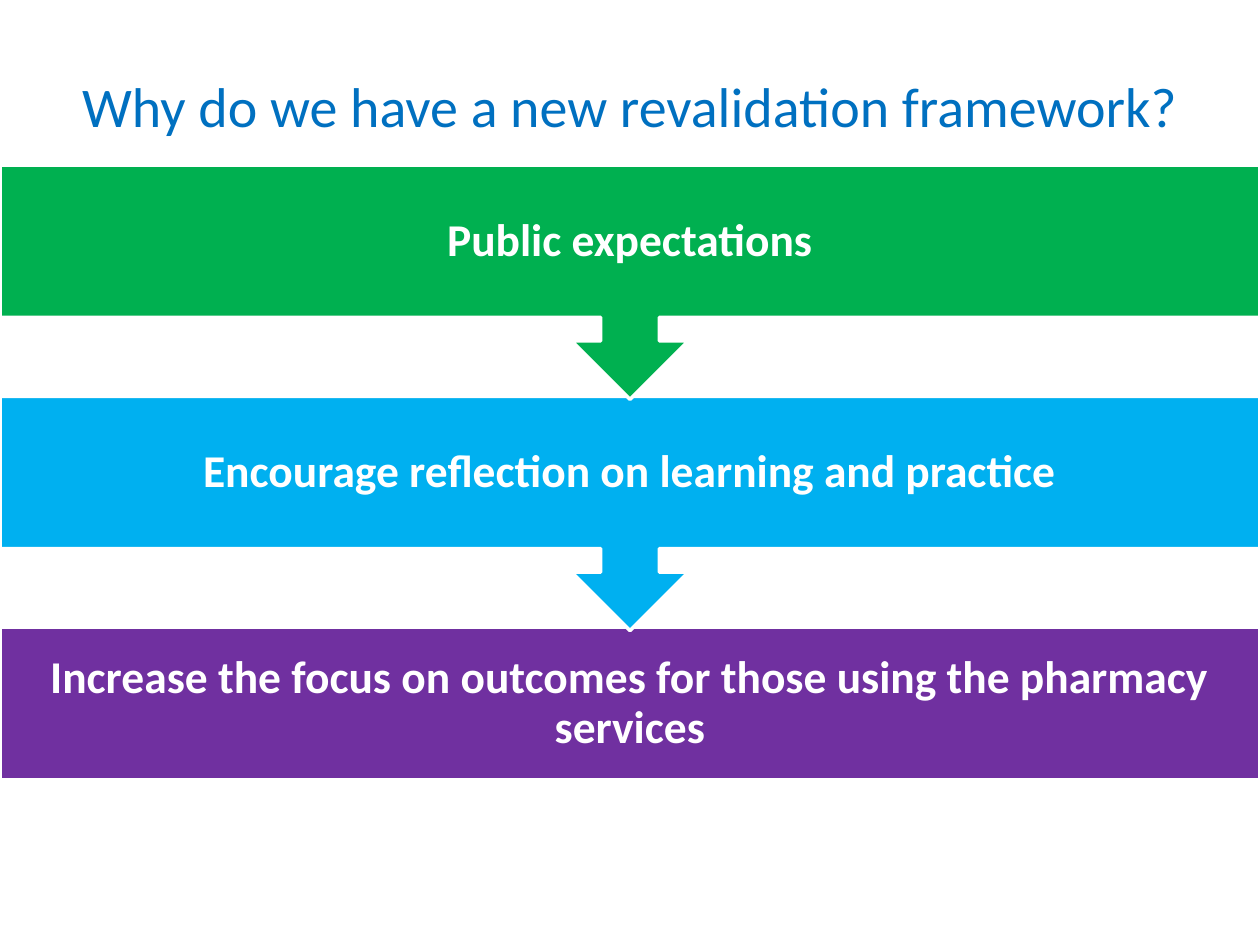
"""Build the slide on the reasons for a new revalidation framework."""
from pptx import Presentation
from pptx import util as u
from pptx.dml.color import RGBColor
from pptx.enum import shapes, text

TITLE = "Why do we have a new revalidation framework?"
STEPS = [
    ("Public expectations", "00B050"),
    ("Encourage reflection on learning and practice", "00B0F0"),
    ("Increase the focus on outcomes for those using the pharmacy services", "7030A0"),
]
THEME = {"font": "Calibri", "title": "0070C0", "light": "FFFFFF",
         "title_size": 32, "step_size": 26, "line": 2}
WIDTH, HEIGHT = 10, 7.5
FIRST_TOP, LAST_TOP = 1.31, 4.98
BAND_H, CALLOUT_H = 1.21, 1.86


def add_text(s, content, top, height, *, size, color, bold=False, inset=0.1, spacing=1.0):
    tf = s.shapes.add_textbox(0, u.Inches(top), u.Inches(WIDTH), u.Inches(height)).text_frame
    tf.word_wrap = True
    tf.vertical_anchor = text.MSO_ANCHOR.MIDDLE
    tf.margin_left = tf.margin_right = tf.margin_top = tf.margin_bottom = u.Inches(inset)
    p = tf.paragraphs[0]
    p.alignment = text.PP_ALIGN.CENTER
    p.line_spacing = spacing
    r = p.add_run()
    r.text = content
    r.font.name = THEME["font"]
    r.font.size = u.Pt(size)
    r.font.bold = bold
    r.font.color.rgb = RGBColor.from_string(color)


def add_step(s, index):
    content, color = STEPS[index]
    last = index == len(STEPS) - 1
    top = FIRST_TOP + index * (LAST_TOP - FIRST_TOP) / (len(STEPS) - 1)
    kind = shapes.MSO_SHAPE.RECTANGLE if last else shapes.MSO_SHAPE.UP_ARROW_CALLOUT
    sp = s.shapes.add_shape(kind, 0, u.Inches(top), u.Inches(WIDTH),
                            u.Inches(BAND_H if last else CALLOUT_H))
    sp.rotation = 0 if last else 180
    sp.shadow.inherit = False
    sp.fill.solid()
    sp.fill.fore_color.rgb = RGBColor.from_string(color)
    sp.line.color.rgb = RGBColor.from_string(THEME["light"])
    sp.line.width = u.Pt(THEME["line"])
    add_text(s, content, top, BAND_H, size=THEME["step_size"], color=THEME["light"],
             bold=True, inset=0.2, spacing=0.9)


def main():
    prs = Presentation()
    prs.slide_width, prs.slide_height = u.Inches(WIDTH), u.Inches(HEIGHT)
    s = prs.slides.add_slide(prs.slide_layouts[6])
    add_text(s, TITLE, 0.06, 1.55, size=THEME["title_size"], color=THEME["title"])
    for index in reversed(range(len(STEPS))):
        add_step(s, index)
    prs.save("out.pptx")


if __name__ == "__main__":
    main()
